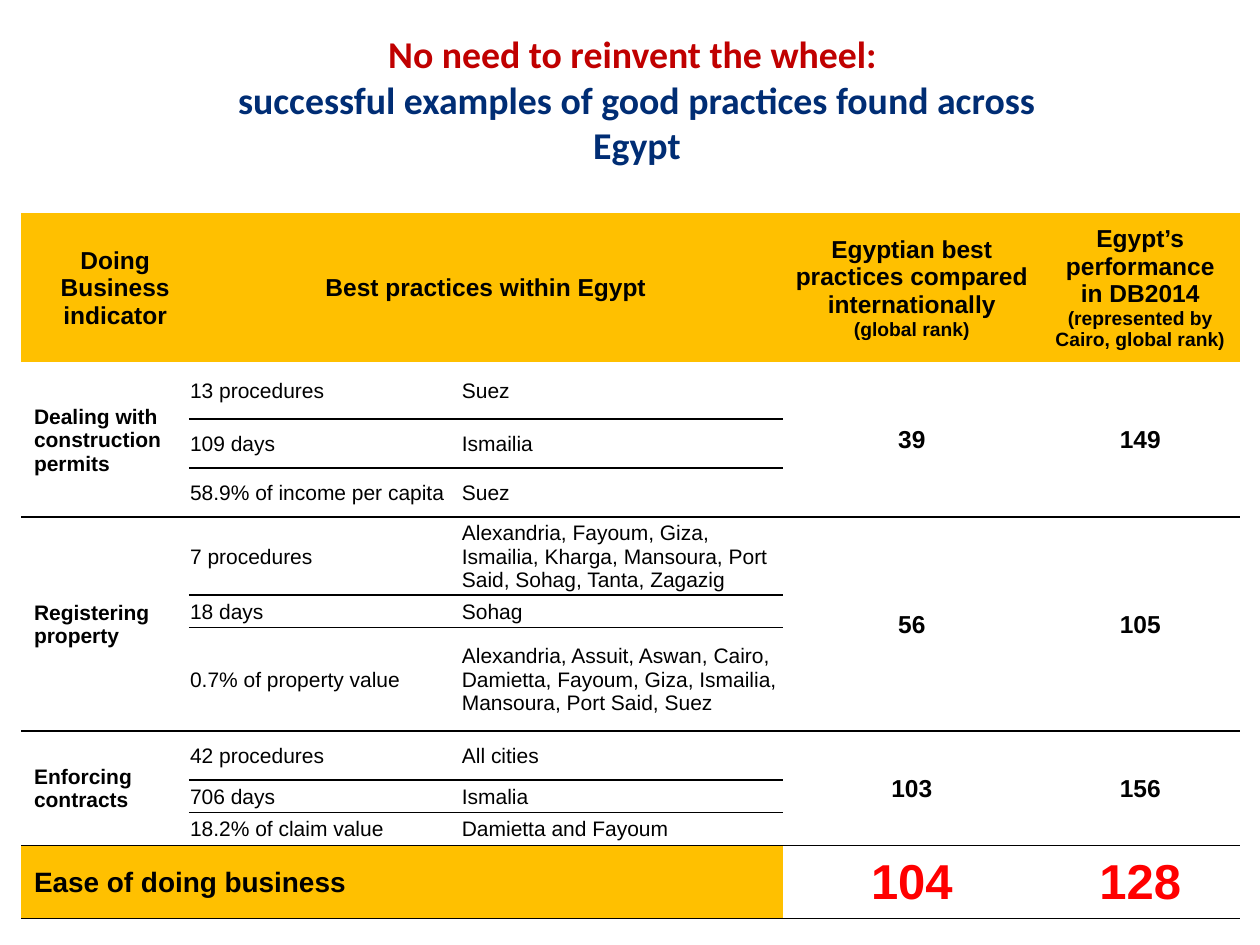
from dataclasses import dataclass

from lxml import etree
from pptx import Presentation
from pptx import util as u
from pptx.dml.color import RGBColor
from pptx.enum import text
from pptx.oxml.ns import qn


@dataclass(frozen=True)
class Theme:
    red: str = "C00000"
    navy: str = "002D74"
    gold: str = "FFC000"
    white: str = "FFFFFF"
    black: str = "000000"
    score: str = "FF0000"
    title_font: str = "Calibri"
    body_font: str = "Arial"
    title: float = 21.6
    header: float = 14
    note: float = 11
    body: float = 12
    total: float = 16
    rank: float = 28
    rule: float = 1


THEME = Theme()
SLIDE_W, SLIDE_H = u.Inches(10), u.Inches(7.5)
CENTER, LEFT = text.PP_ALIGN.CENTER, text.PP_ALIGN.LEFT

# Relative column widths and row heights
COLUMNS = [1.33, 2.16, 2.56, 2.05, 1.58]
HEADER_ROW, TOTAL_ROW = 1.19, 0.58

# Header cells: paragraphs made of (text, size) runs
BIG, NOTE = THEME.header, THEME.note
HEADERS = {
    0: [[("Doing", BIG)], [("Business", BIG)], [("indicator", BIG)]],
    1: [[("Best practices within Egypt", BIG)]],
    3: [[("Egyptian best", BIG)], [("practices compared", BIG)],
        [("internationally", BIG)], [("(global rank)", NOTE)]],
    4: [[("Egypt’s performance", BIG)],
        [("in DB2014", BIG), (" (represented by Cairo, global rank)", NOTE)]],
}

# Indicator, best-practice rank, Cairo rank, (practice, cities, row height)
INDICATORS = [
    ("Dealing with construction permits", "39", "149", [
        ("13 procedures", "Suez", 0.45),
        ("109 days", "Ismailia", 0.39),
        ("58.9% of income per capita", "Suez", 0.39)]),
    ("Registering property", "56", "105", [
        ("7 procedures", "Alexandria, Fayoum, Giza, Ismailia, Kharga, "
         "Mansoura, Port Said, Sohag, Tanta, Zagazig", 0.62),
        ("18 days", "Sohag", 0.26),
        ("0.7% of property value", "Alexandria, Assuit, Aswan, Cairo, Damietta, "
         "Fayoum, Giza, Ismailia, Mansoura, Port Said, Suez", 0.82)]),
    ("Enforcing contracts", "103", "156", [
        ("42 procedures", "All cities", 0.39),
        ("706 days", "Ismalia", 0.26),
        ("18.2% of claim value", "Damietta and Fayoum", 0.26)]),
]


def share_box(left, top, width, height):
    """Turn shares of the slide into a box in EMU."""
    return (int(left * SLIDE_W), int(top * SLIDE_H),
            int(width * SLIDE_W), int(height * SLIDE_H))


def style(font, size, color, face=THEME.body_font, bold=True):
    font.name, font.size, font.bold = face, u.Pt(size), bold
    font.color.rgb = RGBColor.from_string(color)


def write(cell, paragraphs, align=LEFT, color=THEME.black, bold=True, indent=0):
    """Fill a cell with paragraphs of (text, size) runs."""
    frame = cell.text_frame
    for i, runs in enumerate(paragraphs):
        paragraph = frame.add_paragraph() if i else frame.paragraphs[0]
        paragraph.alignment = align
        if indent:
            pPr = paragraph._p.get_or_add_pPr()
            pPr.set("marL", str(u.Inches(indent)))
            pPr.set("indent", "0")
        style(paragraph.font, runs[0][1], color, bold=bold)
        for words, size in runs:
            run = paragraph.add_run()
            run.text = words
            if len(runs) > 1:
                run.font.size = u.Pt(size)


def set_borders(cell, top, bottom):
    """Rule the top and bottom of a cell where asked; hide other edges."""
    tcPr = cell._tc.get_or_add_tcPr()
    edges = {"a:lnL": False, "a:lnR": False, "a:lnT": top, "a:lnB": bottom}
    for i, (tag, ruled) in enumerate(edges.items()):
        line = etree.Element(qn(tag), w=str(u.Pt(THEME.rule)))
        if ruled:
            fill = etree.SubElement(line, qn("a:solidFill"))
            etree.SubElement(fill, qn("a:srgbClr"), val=THEME.black)
        else:
            etree.SubElement(line, qn("a:noFill"))
        tcPr.insert(i, line)


def add_title(slide, box):
    frame = slide.shapes.add_textbox(*box).text_frame
    frame.word_wrap = True
    frame.vertical_anchor = text.MSO_ANCHOR.MIDDLE
    paragraph = frame.paragraphs[0]
    paragraph.alignment = CENTER
    lead = paragraph.add_run()
    lead.text = "No need to reinvent the wheel: "
    paragraph.add_line_break()
    claim = paragraph.add_run()
    claim.text = "successful examples of good practices found across Egypt"
    for run, color in ((lead, THEME.red), (claim, THEME.navy)):
        style(run.font, THEME.title, color, THEME.title_font)


def add_practice_table(slide, box):
    heights = [HEADER_ROW, *(row[2] for group in INDICATORS for row in group[3]),
               TOTAL_ROW]
    last = len(heights) - 1
    table = slide.shapes.add_table(len(heights), len(COLUMNS), *box).table
    table.horz_banding = table.first_row = False
    for column, width in zip(table.columns, COLUMNS):
        column.width = int(box[2] * width / sum(COLUMNS))
    for row, height in zip(table.rows, heights):
        row.height = int(box[3] * height / sum(heights))

    # Fills, margins and rules
    group_ends = {last}
    end = 0
    for group in INDICATORS:
        end += len(group[3])
        group_ends.add(end)

    def ruled_below(r, c):
        return r in group_ends or (r > 0 and c in (1, 2))

    for r in range(len(heights)):
        for c in range(len(COLUMNS)):
            cell = table.cell(r, c)
            golden = r == 0 or (r == last and c < 3)
            cell.fill.solid()
            cell.fill.fore_color.rgb = RGBColor.from_string(
                THEME.gold if golden else THEME.white)
            cell.vertical_anchor = text.MSO_ANCHOR.MIDDLE
            cell.margin_left = u.Inches(0.01 if c else 0.1)
            cell.margin_top = cell.margin_right = u.Inches(0.01)
            cell.margin_bottom = 0
            merged_rows = 0 < r < last and c not in (1, 2)
            set_borders(cell, r > 0 and ruled_below(r - 1, c),
                        merged_rows or ruled_below(r, c))

    # Header
    table.cell(0, 1).merge(table.cell(0, 2))
    for c, paragraphs in HEADERS.items():
        write(table.cell(0, c), paragraphs, CENTER, indent=0 if c else 0.07)

    # Indicator groups
    first = 1
    for indicator, best_rank, cairo_rank, practices in INDICATORS:
        for c in (0, 3, 4):
            table.cell(first, c).merge(table.cell(first + len(practices) - 1, c))
        write(table.cell(first, 0), [[(indicator, THEME.body)]])
        for c, rank in ((3, best_rank), (4, cairo_rank)):
            write(table.cell(first, c), [[(rank, THEME.header)]], CENTER)
        for r, (practice, cities, _) in enumerate(practices, first):
            for c, words in ((1, practice), (2, cities)):
                write(table.cell(r, c), [[(words, THEME.body)]], bold=False)
        first += len(practices)

    # Overall rank
    table.cell(last, 0).merge(table.cell(last, 2))
    write(table.cell(last, 0), [[("Ease of doing business", THEME.total)]])
    for c, rank in ((3, "104"), (4, "128")):
        write(table.cell(last, c), [[(rank, THEME.rank)]], CENTER, THEME.score)


def main():
    deck = Presentation()
    deck.slide_width, deck.slide_height = SLIDE_W, SLIDE_H
    slide = deck.slides.add_slide(deck.slide_layouts[6])
    add_title(slide, share_box(0.153, 0.025, 0.705, 0.16))
    add_practice_table(slide, share_box(0.017, 0.225, 0.967, 0.747))
    deck.save("out.pptx")


if __name__ == "__main__":
    main()
